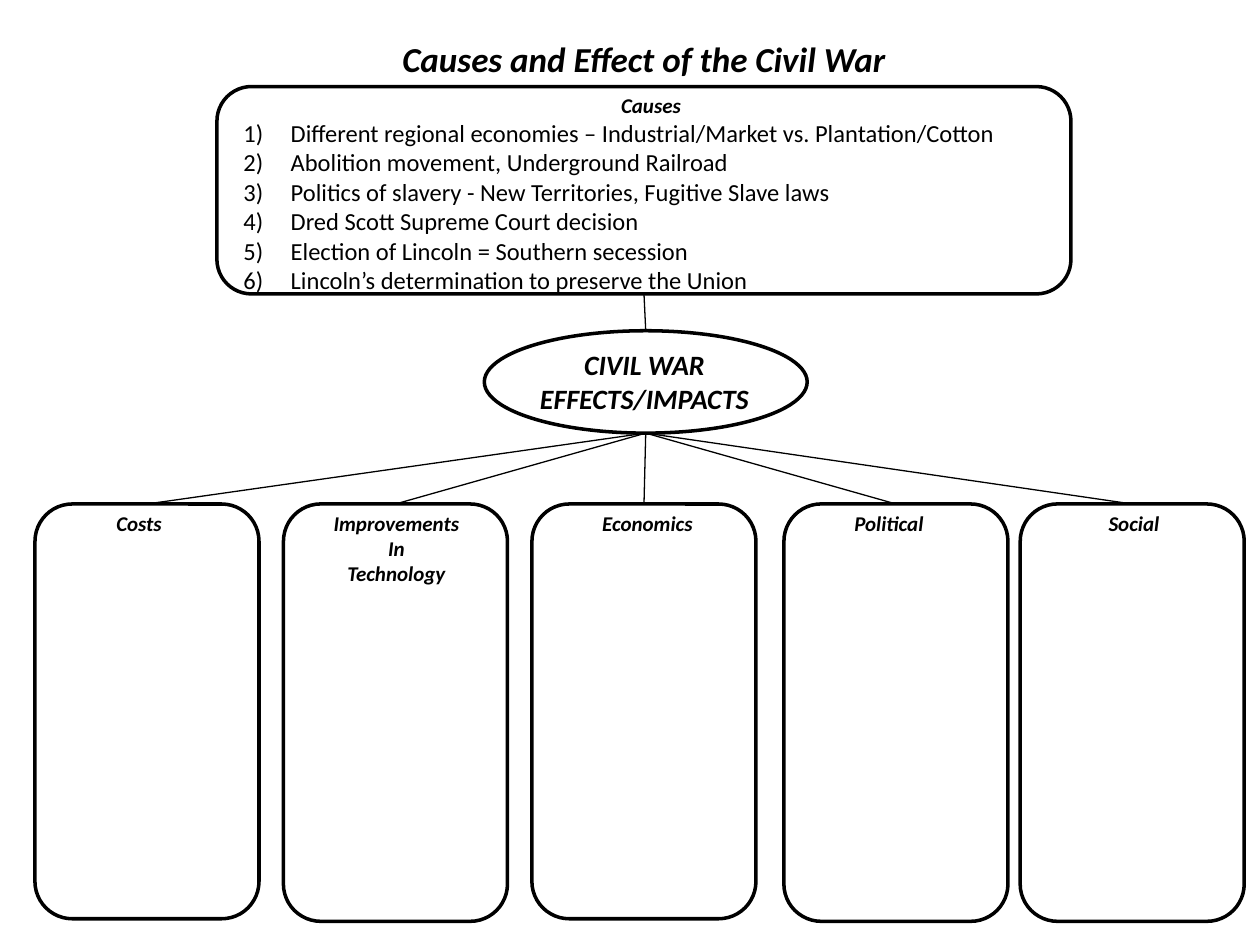
from lxml.etree import SubElement as Sub
from pptx import Presentation
from pptx.dml.color import RGBColor as RGB
from pptx.enum.shapes import MSO_CONNECTOR as LINK, MSO_SHAPE as KIND
from pptx.enum.text import MSO_ANCHOR as ANCHOR, MSO_AUTO_SIZE as FIT, PP_ALIGN as ALIGN
from pptx.oxml.ns import qn
from pptx.util import Pt

TITLE = "Causes and Effect of the Civil War"
HEAD = "Causes"
CAUSES = [
    "Different regional economies – Industrial/Market vs. Plantation/Cotton",
    "Abolition movement, Underground Railroad",
    "Politics of slavery - New Territories, Fugitive Slave laws",
    "Dred Scott Supreme Court decision",
    "Election of Lincoln = Southern secession",
    "Lincoln’s determination to preserve the Union",
]
HUB = ["CIVIL WAR", "EFFECTS/IMPACTS"]
EFFECTS = [
    (["Costs"], 20, 237, (59, 41)),
    (["Improvements", "In", "Technology"], 162, 238.5, (183, 87)),
    (["Economics"], 304, 237, (312, 116)),
    (["Political"], 448, 238.5, (450, 116)),
    (["Social"], 583, 238.5, (590, 116)),
]
COLORS = {"ink": "000000"}
FONT = "Calibri"
INK = RGB.from_string(COLORS["ink"])
CARD_TOP, CARD_WIDTH = 288, 128
HUB_BOX = (276.75, 189, 184.5, 58.5)

deck = Presentation()
deck.slide_width, deck.slide_height = Pt(720), Pt(540)
slide = deck.slides.add_slide(deck.slide_layouts[5])
shapes = slide.shapes


def outline(kind, *box):
    shape = shapes.add_shape(kind, *map(Pt, box))
    shape.shadow.inherit = False
    shape.fill.background()
    shape.line.color.rgb = INK
    shape.line.width = Pt(2)
    return shape


def link(start, end):
    line = shapes.add_connector(LINK.STRAIGHT, *map(Pt, start + end))
    line.line.color.rgb = INK
    line.line.width = Pt(0.75)
    Sub(line._element.spPr, qn("a:effectLst"))
    return line


def write(frame, lines, size=12, bold=True, align=ALIGN.CENTER, wrap=True, number=False, more=False):
    frame.word_wrap = wrap
    frame.auto_size = FIT.NONE
    frame.vertical_anchor = ANCHOR.TOP
    for i, text in enumerate(lines):
        para = frame.add_paragraph() if i or more else frame.paragraphs[0]
        para.alignment = align
        run = para.add_run()
        run.text = text
        font = run.font
        font.name, font.size, font.color.rgb = FONT, Pt(size), INK
        font.bold = font.italic = bold
        if number:
            props = para._p.get_or_add_pPr()
            props.set("marL", str(Pt(27)))
            props.set("indent", str(Pt(-27)))
            Sub(props, qn("a:buAutoNum"), type="arabicParenR")


def label(box, lines, **style):
    frame = shapes.add_textbox(*map(Pt, box)).text_frame
    write(frame, lines, **style)
    return frame


title = shapes.title
title.left, title.top, title.width, title.height = map(Pt, (124, 18, 488, 31.5))
write(title.text_frame, [TITLE], size=20)

panel = outline(KIND.ROUNDED_RECTANGLE, 124, 49.5, 488, 118.5)
frame = label((132, 49.5, 480, 124), [HEAD])
write(frame, CAUSES, size=14, bold=False, align=ALIGN.LEFT, number=True, more=True)

left, top, width, height = HUB_BOX
hub = outline(KIND.OVAL, *HUB_BOX)
label((289.5, 195, 157.5, 46), HUB, size=16)
mid, base = left + width / 2, top + height

stem = link((368, 168), (mid, top))
stem.begin_connect(panel, 2)
stem.end_connect(hub, 0)

for lines, x, tall, (start, wide) in EFFECTS:
    card = outline(KIND.ROUNDED_RECTANGLE, x, CARD_TOP, CARD_WIDTH, tall)
    branch = link((mid, base), (x + CARD_WIDTH / 2, CARD_TOP))
    branch.end_connect(card, 0)
    label((start, CARD_TOP, wide, 7.2 + 14.6 * len(lines)), lines, wrap=wide > 100)

deck.save("out.pptx")
